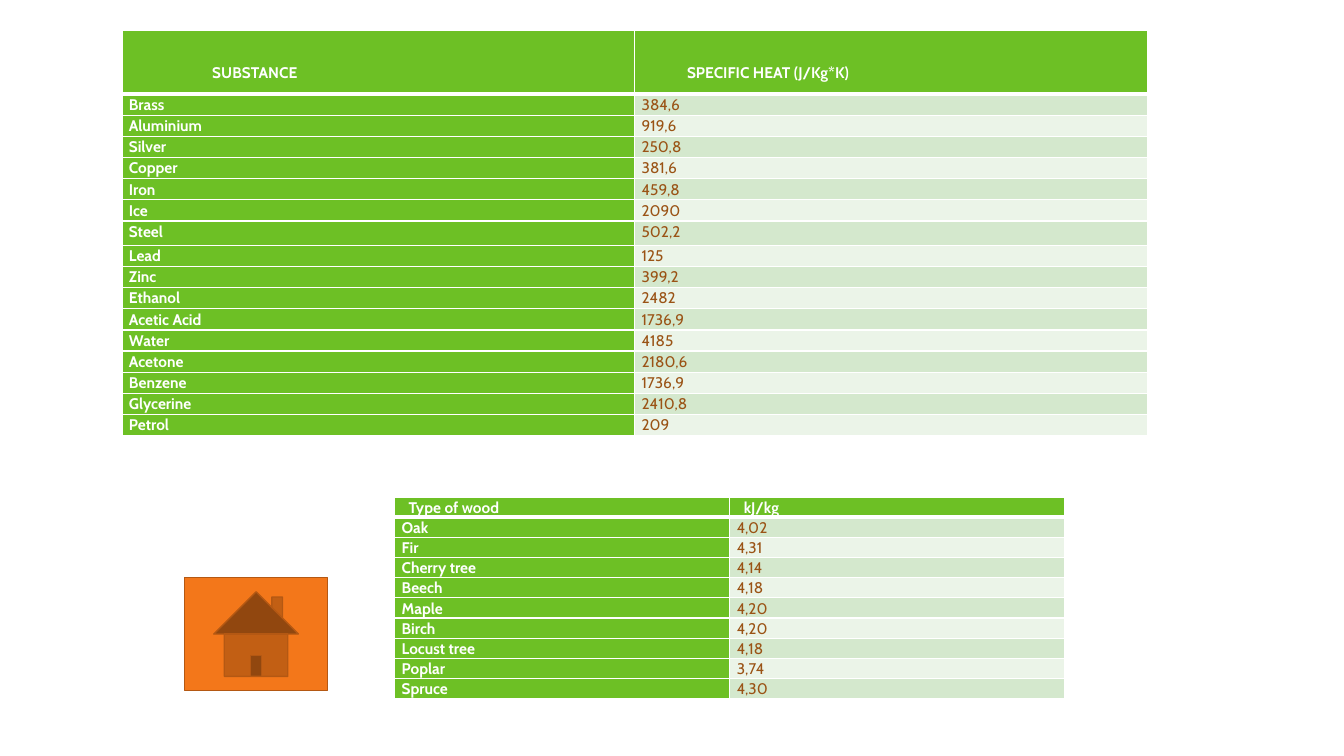
from lxml.etree import SubElement
from pptx import Presentation
from pptx.dml.color import RGBColor
from pptx.enum.shapes import MSO_SHAPE as Preset
from pptx.oxml.ns import qn
from pptx.util import Pt

GREEN, WHITE, BROWN = "6DC025", "FFFFFF", "9A5315"
BANDS = ("D4E8CD", "EBF4E8")
SUBSTANCES = [
    ("SUBSTANCE", "SPECIFIC HEAT (J/Kg*K)"),
    ("Brass", "384,6"), ("Aluminium", "919,6"), ("Silver", "250,8"),
    ("Copper", "381,6"), ("Iron", "459,8"), ("Ice", "2090"),
    ("Steel", "502,2"), ("Lead", "125"), ("Zinc", "399,2"),
    ("Ethanol", "2482"), ("Acetic Acid", "1736,9"), ("Water", "4185"),
    ("Acetone", "2180,6"), ("Benzene", "1736,9"), ("Glycerine", "2410,8"),
    ("Petrol", "209"),
]
WOODS = [
    ("Type of wood", "kJ/kg"),
    ("Oak", "4,02"), ("Fir", "4,31"), ("Cherry tree", "4,14"),
    ("Beech", "4,18"), ("Maple", "4,20"), ("Birch", "4,20"),
    ("Locust tree", "4,18"), ("Poplar", "3,74"), ("Spruce", "4,30"),
]


def color(value):
    """Turn a hex string into a colour."""
    return RGBColor.from_string(value)


def apply(target, values):
    """Set each attribute named in values on the target."""
    for name, value in values.items():
        setattr(target, name, value)


def paint(shape, value):
    """Give a shape or cell a solid fill."""
    shape.fill.solid()
    shape.fill.fore_color.rgb = color(value)


def add_borders(cell, widths):
    """Draw white cell borders, with widths in points by side."""
    properties = cell._tc.get_or_add_tcPr()
    for side, width in widths.items():
        line = SubElement(properties, qn(f"a:ln{side}"), w=str(Pt(width)))
        fill = SubElement(line, qn("a:solidFill"))
        SubElement(fill, qn("a:srgbClr"), val=WHITE)


def write_cell(cell, text, fill, font_color, bold, left=5, top=0):
    """Fill one cell with its text and background."""
    apply(cell, {"margin_left": Pt(left), "margin_right": Pt(5),
                 "margin_top": Pt(top), "margin_bottom": 0})
    paint(cell, fill)
    paragraph = cell.text_frame.paragraphs[0]
    apply(paragraph, {"line_spacing": 1.07, "space_after": Pt(8)})
    run = paragraph.add_run()
    run.text = text
    apply(run.font, {"name": "Cabin", "size": Pt(11), "bold": bold})
    run.font.color.rgb = color(font_color)


def add_values_table(slide, rows, position, column_width, heights, indents, header_top=0):
    """Add a two-column table with a green header and first column."""
    left, top = position
    frame = slide.shapes.add_table(len(rows), 2, Pt(left), Pt(top),
                                   Pt(2 * column_width), Pt(sum(heights)))
    table = frame.table
    table.horz_banding = False
    for column in table.columns:
        column.width = Pt(column_width)
    for row_index, (row, height) in enumerate(zip(rows, heights)):
        table.rows[row_index].height = Pt(height)
        for column_index, text in enumerate(row):
            cell = table.cell(row_index, column_index)
            add_borders(cell, {"L": 1, "R": 1, "T": 3 if row_index == 1 else 1,
                               "B": 3 if row_index == 0 else 1})
            if row_index == 0:
                write_cell(cell, text, GREEN, WHITE, True, indents[column_index], header_top)
            elif column_index == 0:
                write_cell(cell, text, GREEN, WHITE, True)
            else:
                write_cell(cell, text, BANDS[(row_index - 1) % 2], BROWN, False)


def add_home_button(slide, left, top, width, height):
    """Add the orange home button."""
    button = slide.shapes.add_shape(Preset.ACTION_BUTTON_HOME, Pt(left), Pt(top),
                                    Pt(width), Pt(height))
    button.shadow.inherit = False
    paint(button, "F3771A")
    button.line.color.rgb = color("B45813")
    button.line.width = Pt(1)


def main():
    """Build the slide and save it."""
    presentation = Presentation()
    apply(presentation, {"slide_width": Pt(960), "slide_height": Pt(540)})
    slide = presentation.slides.add_slide(presentation.slide_layouts[6])
    add_home_button(slide, 131.8, 412.6, 102.2, 80.6)
    substance_heights = [45.6] + [17.5 if name == "Steel" else 15.1
                                  for name, _ in SUBSTANCES[1:]]
    add_values_table(slide, SUBSTANCES, (87.1, 21.8), 366.2, substance_heights,
                     (64.5, 37.5), 22.4)
    add_values_table(slide, WOODS, (281.9, 355), 239.4, [14.3] * len(WOODS), (10, 10))
    presentation.save("out.pptx")


if __name__ == "__main__":
    main()
